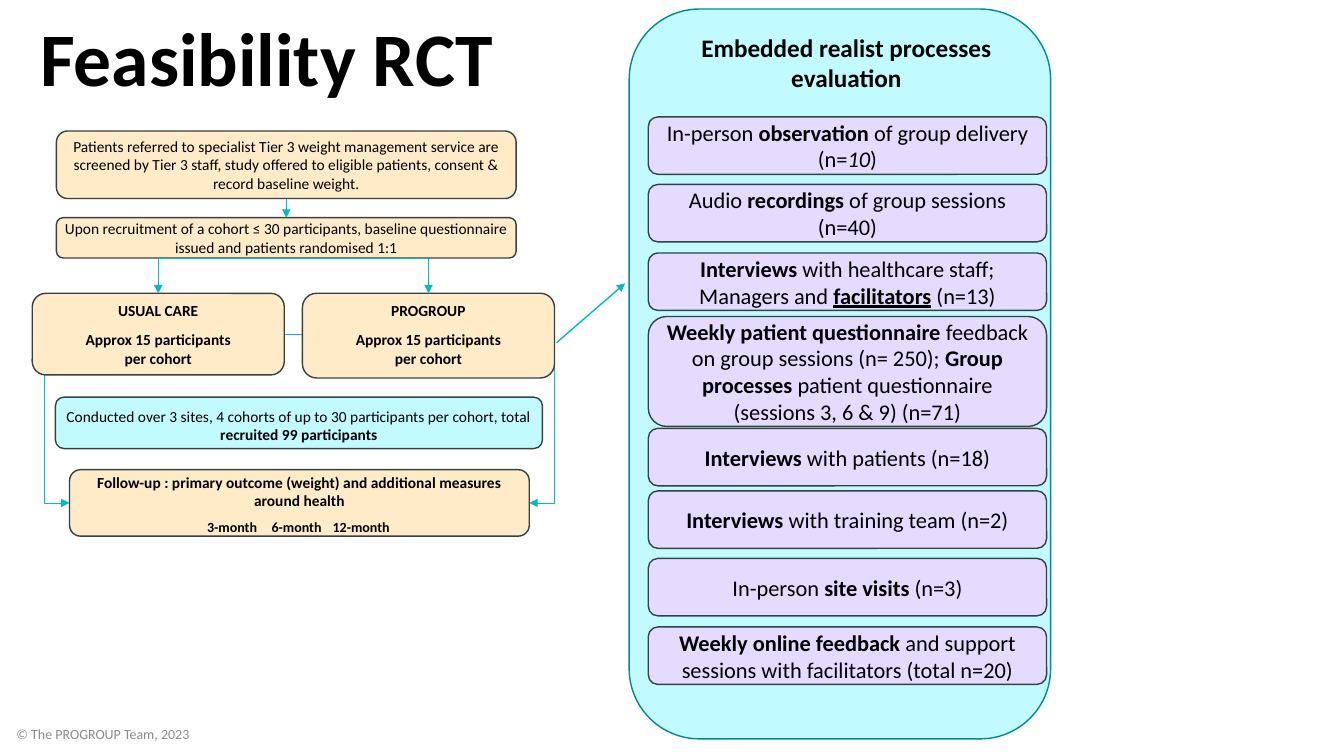
from pptx import Presentation
from pptx.dml.color import RGBColor
from pptx.enum.shapes import MSO_CONNECTOR as CONN, MSO_SHAPE as SHAPE
from pptx.enum.text import MSO_ANCHOR as ANCHOR, PP_ALIGN as ALIGN
from pptx.oxml.ns import qn
from pptx.util import Inches, Pt
from lxml.etree import SubElement

FONT = "Calibri"
COLORS = {
    "black": "000000", "grey": "8C8C8C", "outline": "354242",
    "cream": "FFEBC7", "aqua": "C1FBFF", "lilac": "E4DBFF",
    "teal": "008A94", "arrow": "00BAC8",
}

# Each run is (text, style); style letters: b bold, i italic, u underline
DATA_SOURCES = [  # top within the panel, height, runs
    (1.07, 0.57, [("In-person ", ""), ("observation", "b"),
                  (" of group delivery (n=", ""), ("10", "i"), (")", "")]),
    (1.74, 0.57, [("Audio ", ""), ("recordings", "b"),
                  (" of group sessions (n=40)", "")]),
    (2.42, 0.57, [("Interviews ", "b"), ("with healthcare staff; Managers and ", ""),
                  ("facilitators", "bu"), (" (n=13)", "")]),
    (3.05, 1.09, [("Weekly patient questionnaire", "b"),
                  (" feedback on group sessions (n= 250); ", ""),
                  ("Group processes ", "b"),
                  ("patient questionnaire (sessions 3, 6 & 9) (n=71)", "")]),
    (4.16, 0.57, [("Interviews", "b"), (" with patients (n=18)", "")]),
    (4.78, 0.57, [("Interviews ", "b"), ("with training team (n=2)", "")]),
    (5.45, 0.57, [("In-person ", ""), ("site visits ", "b"), ("(n=3)", "")]),
    (6.13, 0.57, [("Weekly online feedback ", "b"),
                  ("and support sessions with facilitators (total n=20)", "")]),
]


def rgb(name):
    return RGBColor.from_string(COLORS[name])


def set_font(p, size, bold=None, color="black"):
    p.font.name, p.font.size, p.font.bold = FONT, Pt(size), bold
    p.font.color.rgb = rgb(color)


def set_frame(tf, anchor, margins):
    tf.word_wrap = True
    tf.vertical_anchor = anchor
    tf.margin_left = tf.margin_right = Inches(margins[0])
    tf.margin_top, tf.margin_bottom = Inches(margins[1]), Inches(margins[2])


def add_para(tf, runs, size, before=None, tabs=()):
    """Fill the empty first paragraph, or append one; a string is a single run."""
    p = tf.paragraphs[0] if not tf.paragraphs[0].runs else tf.add_paragraph()
    p.alignment = ALIGN.LEFT if tabs else ALIGN.CENTER
    if before:
        p.space_before = Pt(before)
    if tabs:
        tab_list = SubElement(p._p.get_or_add_pPr(), qn("a:tabLst"))
        for pos in tabs:
            SubElement(tab_list, qn("a:tab"), pos=str(Inches(pos)), algn="ctr")
    all_bold = isinstance(runs, str) or all("b" in style for _, style in runs)
    set_font(p, size, all_bold)
    for text, style in [(runs, "")] if isinstance(runs, str) else runs:
        for i, line in enumerate(text.split("\n")):
            if i:
                p.add_line_break()
            r = p.add_run()
            r.text = line
            if "b" in style and not all_bold:
                r.font.bold = True
            if "i" in style:
                r.font.italic = True
            if "u" in style:
                r.font.underline = True


def add_box(s, x, y, w, h, fill, line="outline", anchor=ANCHOR.MIDDLE,
            margins=(0.06, 0.03, 0.03)):
    sp = s.shapes.add_shape(SHAPE.ROUNDED_RECTANGLE,
                            Inches(x), Inches(y), Inches(w), Inches(h))
    sp.shadow.inherit = False
    sp.fill.solid()
    sp.fill.fore_color.rgb = rgb(fill)
    sp.line.color.rgb = rgb(line)
    sp.line.width = Pt(1)
    set_frame(sp.text_frame, anchor, margins)
    return sp.text_frame


def add_arrow(s, x1, y1, x2, y2, width=0.5, preset=None, bend=None):
    """Arrow; preset names a bent connector, bend is its turn as a share of the width."""
    kind = CONN.ELBOW if preset else CONN.STRAIGHT
    c = s.shapes.add_connector(kind, Inches(x1), Inches(y1), Inches(x2), Inches(y2))
    c.line.color.rgb = rgb("arrow")
    c.line.width = Pt(width)
    sp_pr = c._element.spPr
    if preset:
        geom = sp_pr.find(qn("a:prstGeom"))
        geom.set("prst", preset)
        if bend:
            guides = geom.find(qn("a:avLst"))
            if guides is None:
                guides = SubElement(geom, qn("a:avLst"))
            SubElement(guides, qn("a:gd"), name="adj1", fmla=f"val {round(bend * 100000)}")
    SubElement(sp_pr.find(qn("a:ln")), qn("a:tailEnd"), type="triangle")
    SubElement(sp_pr, qn("a:effectLst"))


def add_title(s, x, y, w, h):
    title = s.shapes.title
    title.left, title.top, title.width, title.height = map(Inches, (x, y, w, h))
    tf = title.text_frame
    set_frame(tf, ANCHOR.BOTTOM, (0.1, 0.05, 0.05))
    tf.text = "Feasibility RCT"
    p = tf.paragraphs[0]
    p.alignment = ALIGN.LEFT
    p.line_spacing = 0.9
    set_font(p, 54, True)


def add_trial_flow(s, x, y):
    step_w, arm_w = 4.56, 2.5
    left_arm, right_arm, arm_y = x, x + 2.68, y + 1.61
    step_x, cohort_y = x + 0.24, y + 0.86
    spine, cohort_end = step_x + step_w / 2, cohort_y + 0.4
    follow_x, follow_y, follow_h = x + 0.37, y + 3.36, 0.66
    follow_mid = follow_y + follow_h / 2

    # Paths from the arms to follow-up, behind the boxes
    for start, end in ((left_arm + arm_w, follow_x + step_w), (right_arm, follow_x)):
        outer = end + 0.25 if end > start else end - 0.25
        add_arrow(s, start, arm_y + 0.41, end, follow_mid, preset="bentConnector3",
                  bend=(outer - start) / (end - start))

    # Recruitment
    tf = add_box(s, step_x, y, step_w, 0.67, "cream")
    add_para(tf, [("Patients referred to specialist Tier 3 weight management service are "
                   "screened by Tier 3 staff, study offered to eligible patients, "
                   "consent & record baseline weight.", "")], 11)
    tf = add_box(s, step_x, cohort_y, step_w, 0.4, "cream")
    add_para(tf, [("Upon recruitment of a cohort ≤ 30 participants, baseline "
                   "questionnaire issued and patients randomised 1:1", "")], 11)

    # Trial arms
    for arm_x, arm_h, name in ((left_arm, 0.81, "USUAL CARE"), (right_arm, 0.84, "PROGROUP")):
        tf = add_box(s, arm_x, arm_y, arm_w, arm_h, "cream", anchor=ANCHOR.TOP,
                     margins=(0.04, 0.04, 0.04))
        add_para(tf, name, 11)
        add_para(tf, "Approx 15 participants\nper cohort", 11, before=7.5)

    # Follow-up
    tf = add_box(s, follow_x, follow_y, step_w, follow_h, "cream", anchor=ANCHOR.TOP,
                 margins=(0.06, 0, 0.03))
    add_para(tf, "Follow-up : primary outcome (weight) and additional measures "
                 "around health", 11)
    add_para(tf, "\t3-month\t6-month\t12-month", 10, before=6, tabs=(1.52, 2.16, 2.8))

    # Sites and recruitment total
    tf = add_box(s, x + 0.23, y + 2.64, 4.83, 0.51, "aqua", anchor=ANCHOR.TOP,
                 margins=(0.04, 0.07, 0))
    add_para(tf, [("Conducted over 3 sites, 4 cohorts of up to 30 participants per cohort, "
                   "total ", ""), ("recruited 99 participants", "b")], 11)

    # Arrows down to the arms
    add_arrow(s, spine, y + 0.67, spine, cohort_y)
    for arm_x in (right_arm, left_arm):
        add_arrow(s, spine, cohort_end, arm_x + arm_w / 2, arm_y, preset="bentConnector2")


def add_evaluation_panel(s, x, y, w, h):
    add_box(s, x, y, w, h, "aqua", line="teal")
    heading = s.shapes.add_textbox(Inches(x + 0.27), Inches(y + 0.18),
                                   Inches(3.77), Inches(0.71))
    set_frame(heading.text_frame, ANCHOR.TOP, (0.1, 0.05, 0.05))
    add_para(heading.text_frame, "Embedded realist processes evaluation", 18)
    for top, height, runs in DATA_SOURCES:
        add_para(add_box(s, x + 0.19, y + top, 3.95, height, "lilac"), runs, 16)


def add_copyright(s, x, y, w, h):
    tb = s.shapes.add_textbox(Inches(x), Inches(y), Inches(w), Inches(h))
    set_frame(tb.text_frame, ANCHOR.MIDDLE, (0.05, 0.05, 0.05))
    p = tb.text_frame.paragraphs[0]
    p.text = "© The PROGROUP Team, 2023"
    p.alignment = ALIGN.CENTER
    set_font(p, 10, color="grey")


def main():
    prs = Presentation()
    prs.slide_width, prs.slide_height = Inches(13.33), Inches(7.5)
    s = prs.slides.add_slide(prs.slide_layouts[5])
    add_trial_flow(s, 0.32, 1.3)
    add_title(s, 0.3, 0.39, 7.46, 0.68)
    add_copyright(s, 0.02, 7.13, 2, 0.3)
    add_evaluation_panel(s, 6.24, 0.09, 4.18, 7.24)
    add_arrow(s, 5.52, 3.4, 6.2, 2.81, width=1)
    prs.save("out.pptx")


if __name__ == "__main__":
    main()
